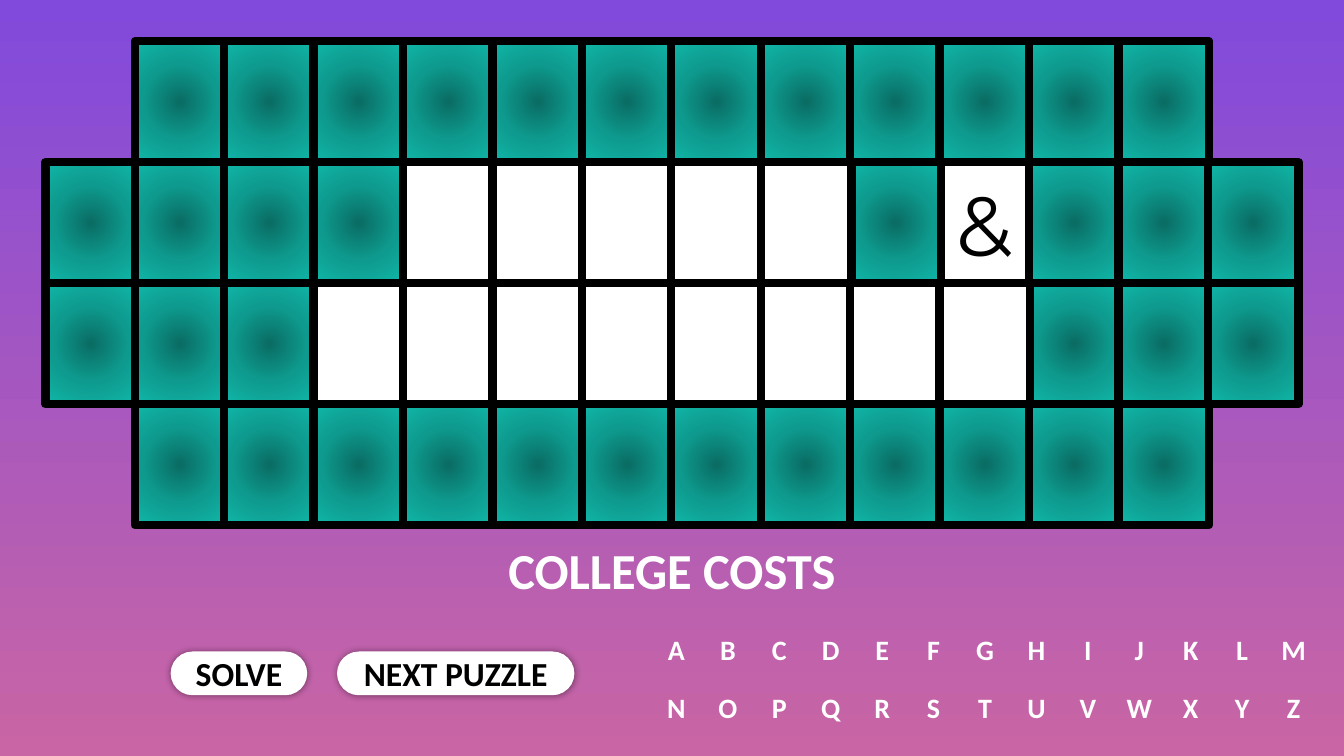
from lxml import etree
from pptx import Presentation
from pptx.dml.color import RGBColor
from pptx.enum.shapes import MSO_SHAPE
from pptx.enum.text import MSO_ANCHOR, PP_ALIGN
from pptx.oxml import parse_xml
from pptx.oxml.ns import nsdecls, qn
from pptx.util import Inches, Pt

# "." is a teal tile, "#" a blank white tile, a space no tile
BOARD = [
    " ............ ",
    "....#####.&...",
    "...########...",
    " ............ ",
]
CATEGORY = "COLLEGE COSTS"
BUTTONS = [("SOLVE", 1.7, 1.34), ("NEXT PUZZLE", 3.35, 2.34)]
ALPHABET = ["ABCDEFGHIJKLM", "NOPQRSTUVWXYZ"]

BLACK = RGBColor(0x00, 0x00, 0x00)
WHITE = RGBColor(0xFF, 0xFF, 0xFF)
PURPLE = RGBColor(0x81, 0x49, 0xDC)
PINK = RGBColor(0xC9, 0x65, 0xA4)
TEAL_STOPS = [
    (0, RGBColor(0x0A, 0x6C, 0x63)),
    (50, RGBColor(0x0E, 0x9A, 0x8E)),
    (100, RGBColor(0x10, 0xB7, 0xA8)),
]
RECTANGLE, PILL = MSO_SHAPE.RECTANGLE, MSO_SHAPE.ROUNDED_RECTANGLE
CENTER, MIDDLE = PP_ALIGN.CENTER, MSO_ANCHOR.MIDDLE

BOARD_LEFT, BOARD_TOP = 0.45, 0.41
TILE_WIDTH, TILE_HEIGHT = 0.9, 1.2
COLUMN_STEP = (11.98 - BOARD_LEFT) / 13
LETTER_LEFT, LETTER_TOP = 6.51, 6.13
LETTER_STEP, LETTER_ROW_STEP = 0.51, 0.58


def write_text(shape, text, size, color, font="Calibri", bold=True):
    frame = shape.text_frame
    frame.word_wrap = True
    frame.vertical_anchor = MIDDLE
    frame.margin_left = frame.margin_right = 0
    frame.margin_top = frame.margin_bottom = 0
    para = frame.paragraphs[0]
    para.alignment = CENTER
    span = para.add_run()
    span.text = text
    span.font.name = font
    span.font.size = Pt(size)
    span.font.bold = bold
    span.font.color.rgb = color


def add_panel(slide, kind, left, top, width, height, line_color, line_width):
    shape = slide.shapes.add_shape(
        kind, Inches(left), Inches(top), Inches(width), Inches(height))
    shape.shadow.inherit = False
    shape.fill.solid()
    shape.fill.fore_color.rgb = WHITE
    shape.line.color.rgb = line_color
    shape.line.width = Pt(line_width)
    return shape


def fill_from_center(shape, stops):
    """Replace the solid fill with a circular gradient."""
    gradient = parse_xml(
        f'<a:gradFill {nsdecls("a")} rotWithShape="1"><a:gsLst/>'
        '<a:path path="circle"><a:fillToRect l="50000" t="50000" '
        'r="50000" b="50000"/></a:path></a:gradFill>')
    for position, color in stops:
        stop = etree.SubElement(gradient[0], qn("a:gs"), pos=str(position * 1000))
        etree.SubElement(stop, qn("a:srgbClr"), val=str(color))
    properties = shape.element.spPr
    properties.replace(properties.find(qn("a:solidFill")), gradient)


def add_glow_shadow(shape):
    """Add a soft black shadow, 40% opaque and 5 points wide."""
    effects = shape.element.spPr.find(qn("a:effectLst"))
    effects.append(parse_xml(
        f'<a:outerShdw {nsdecls("a")} blurRad="{Pt(5)}" dist="0" dir="0" '
        'algn="ctr" rotWithShape="0"><a:srgbClr val="000000">'
        '<a:alpha val="40000"/></a:srgbClr></a:outerShdw>'))


def add_tiles(slide, mark):
    for row, marks in enumerate(BOARD):
        for column, found in enumerate(marks):
            if found != mark:
                continue
            tile = add_panel(
                slide, RECTANGLE, BOARD_LEFT + column * COLUMN_STEP,
                BOARD_TOP + row * TILE_HEIGHT, TILE_WIDTH, TILE_HEIGHT, BLACK, 6)
            if mark == ".":
                fill_from_center(tile, TEAL_STOPS)
            elif mark != "#":
                write_text(tile, mark, 60, BLACK, font="Montserrat", bold=False)


def main():
    deck = Presentation()
    deck.slide_width, deck.slide_height = Inches(13.33), Inches(7.5)
    slide = deck.slides.add_slide(deck.slide_layouts[5])

    backdrop = slide.background.fill
    backdrop.gradient()
    backdrop.gradient_angle = 270
    for stop, color in zip(backdrop.gradient_stops, (PURPLE, PINK)):
        stop.color.rgb = color

    title = slide.shapes.title
    title.left, title.top = Inches(0), Inches(5.34)
    title.width, title.height = Inches(13.33), Inches(0.62)
    write_text(title, CATEGORY, 36, WHITE)

    for mark in "&.#":
        add_tiles(slide, mark)

    for label, left, width in BUTTONS:
        button = add_panel(slide, PILL, left, 6.47, width, 0.42, WHITE, 1)
        button.adjustments[0] = 0.5
        add_glow_shadow(button)
        write_text(button, label, 24, BLACK)

    for row, letters in enumerate(ALPHABET):
        for column, letter in enumerate(letters):
            box = slide.shapes.add_textbox(
                Inches(LETTER_LEFT + column * LETTER_STEP),
                Inches(LETTER_TOP + row * LETTER_ROW_STEP),
                Inches(0.4), Inches(0.62))
            write_text(box, letter, 20, WHITE)

    deck.save("out.pptx")


if __name__ == "__main__":
    main()
